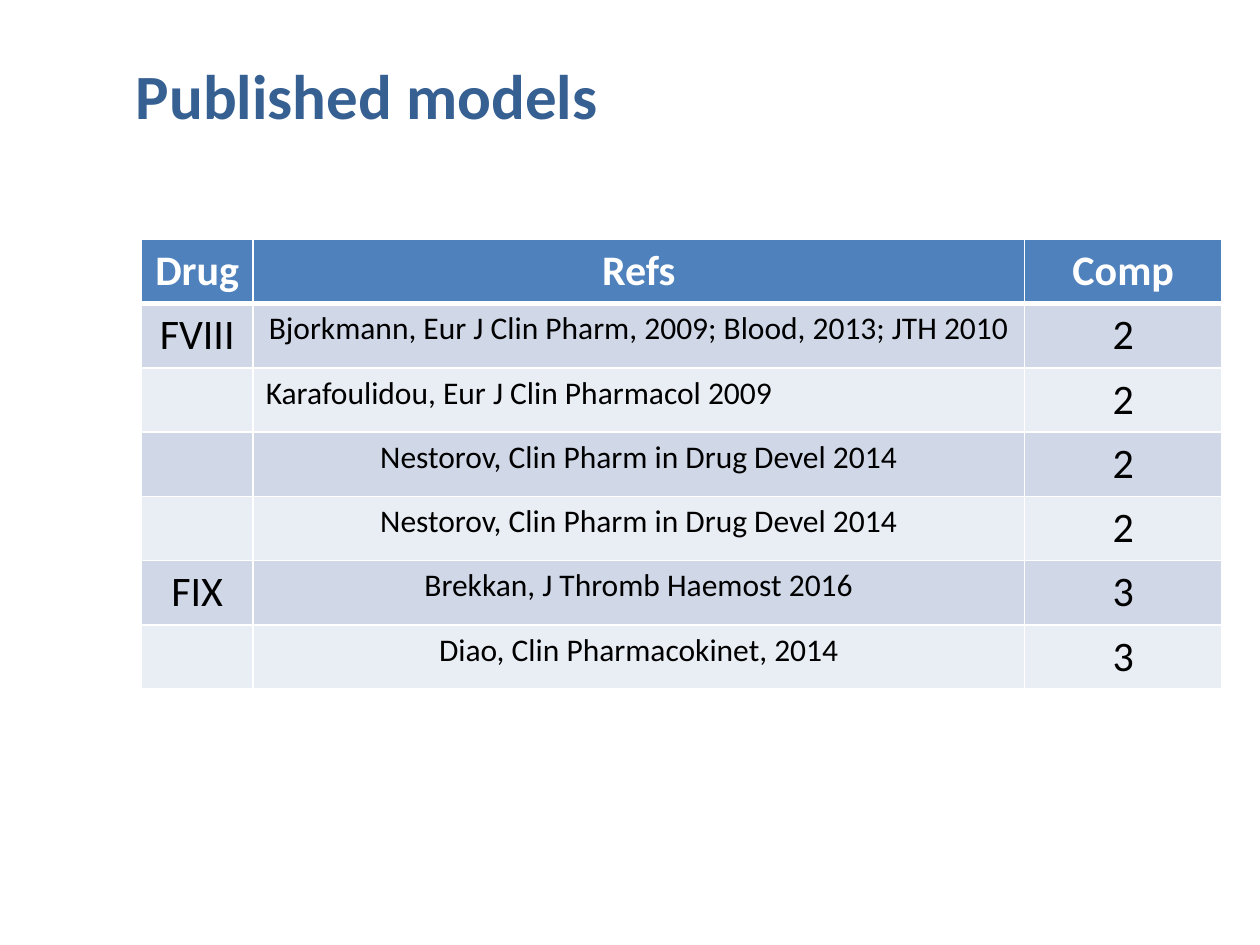
from dataclasses import dataclass

from lxml import etree
from pptx import Presentation
from pptx.dml.color import RGBColor
from pptx.enum import text
from pptx.oxml import ns
from pptx.util import Inches, Pt


@dataclass(frozen=True)
class Theme:
    font: str = "Calibri"
    title: str = "376092"
    header: str = "4F81BD"
    bands: tuple[str, str] = ("D0D8E8", "E9EDF4")
    white: str = "FFFFFF"
    black: str = "000000"
    title_size: int = 36
    body_size: int = 24
    ref_size: int = 18


@dataclass(frozen=True)
class Model:
    drug: str
    refs: str
    comp: str
    refs_align: text.PP_ALIGN = text.PP_ALIGN.CENTER


THEME = Theme()
COLUMN_WIDTHS = (0.89, 6.12, 1.57)
ROW_HEIGHT = 0.51
HEADERS = ("Drug", "Refs", "Comp")
MODELS = (
    Model("FVIII", "Bjorkmann, Eur J Clin Pharm, 2009; Blood, 2013; JTH 2010", "2"),
    Model("", "Karafoulidou, Eur J Clin Pharmacol 2009", "2", text.PP_ALIGN.LEFT),
    Model("", "Nestorov, Clin Pharm in Drug Devel 2014", "2"),
    Model("", "Nestorov, Clin Pharm in Drug Devel 2014", "2"),
    Model("FIX", "Brekkan, J Thromb Haemost 2016", "3"),
    Model("", "Diao, Clin Pharmacokinet, 2014", "3"),
)


def add_run(p, content: str, size: int, color: str, bold: bool = False) -> None:
    r = p.add_run()
    r.text = content
    r.font.name = THEME.font
    r.font.size = Pt(size)
    r.font.bold = bold
    r.font.color.rgb = RGBColor.from_string(color)


def set_borders(cell, top: float = 1, bottom: float = 1) -> None:
    tc_pr = cell._tc.get_or_add_tcPr()
    for side, width in (("L", 1), ("R", 1), ("T", top), ("B", bottom)):
        line = etree.SubElement(tc_pr, ns.qn(f"a:ln{side}"), w=str(Pt(width)))
        fill = etree.SubElement(line, ns.qn("a:solidFill"))
        etree.SubElement(fill, ns.qn("a:srgbClr"), val=THEME.white)


def fill_cell(cell, content: str, fill: str, size: int, color: str, bold: bool = False,
              align: text.PP_ALIGN = text.PP_ALIGN.CENTER) -> None:
    cell.fill.solid()
    cell.fill.fore_color.rgb = RGBColor.from_string(fill)
    if content:
        p = cell.text_frame.paragraphs[0]
        p.alignment = align
        add_run(p, content, size, color, bold)


def add_title(slide, content: str) -> None:
    sp = slide.shapes.add_textbox(Inches(0.98), Inches(0.39), Inches(9), Inches(0.71))
    tf = sp.text_frame
    tf.word_wrap = True
    tf.vertical_anchor = text.MSO_ANCHOR.BOTTOM
    add_run(tf.paragraphs[0], content, THEME.title_size, THEME.title, bold=True)


def add_models_table(slide, models: tuple[Model, ...]) -> None:
    rows = len(models) + 1
    table = slide.shapes.add_table(
        rows, len(HEADERS), Inches(1.12), Inches(1.9),
        Inches(sum(COLUMN_WIDTHS)), Inches(ROW_HEIGHT * rows)).table
    for column, width in zip(table.columns, COLUMN_WIDTHS):
        column.width = Inches(width)
    for row in table.rows:
        row.height = Inches(ROW_HEIGHT)

    # Header row, with a heavier rule below it
    for col, label in enumerate(HEADERS):
        cell = table.cell(0, col)
        set_borders(cell, bottom=3)
        fill_cell(cell, label, THEME.header, THEME.body_size, THEME.white, bold=True)

    # Banded model rows
    for row, model in enumerate(models, start=1):
        band = THEME.bands[(row - 1) % 2]
        values = (
            (model.drug, THEME.body_size, text.PP_ALIGN.CENTER),
            (model.refs, THEME.ref_size, model.refs_align),
            (model.comp, THEME.body_size, text.PP_ALIGN.CENTER),
        )
        for col, (content, size, align) in enumerate(values):
            cell = table.cell(row, col)
            set_borders(cell, top=3 if row == 1 else 1)
            fill_cell(cell, content, band, size, THEME.black, align=align)


def main() -> None:
    prs = Presentation()
    prs.slide_width, prs.slide_height = Inches(10), Inches(7.5)
    s = prs.slides.add_slide(prs.slide_layouts[6])
    add_title(s, "Published models")
    add_models_table(s, MODELS)
    prs.save("out.pptx")


if __name__ == "__main__":
    main()
